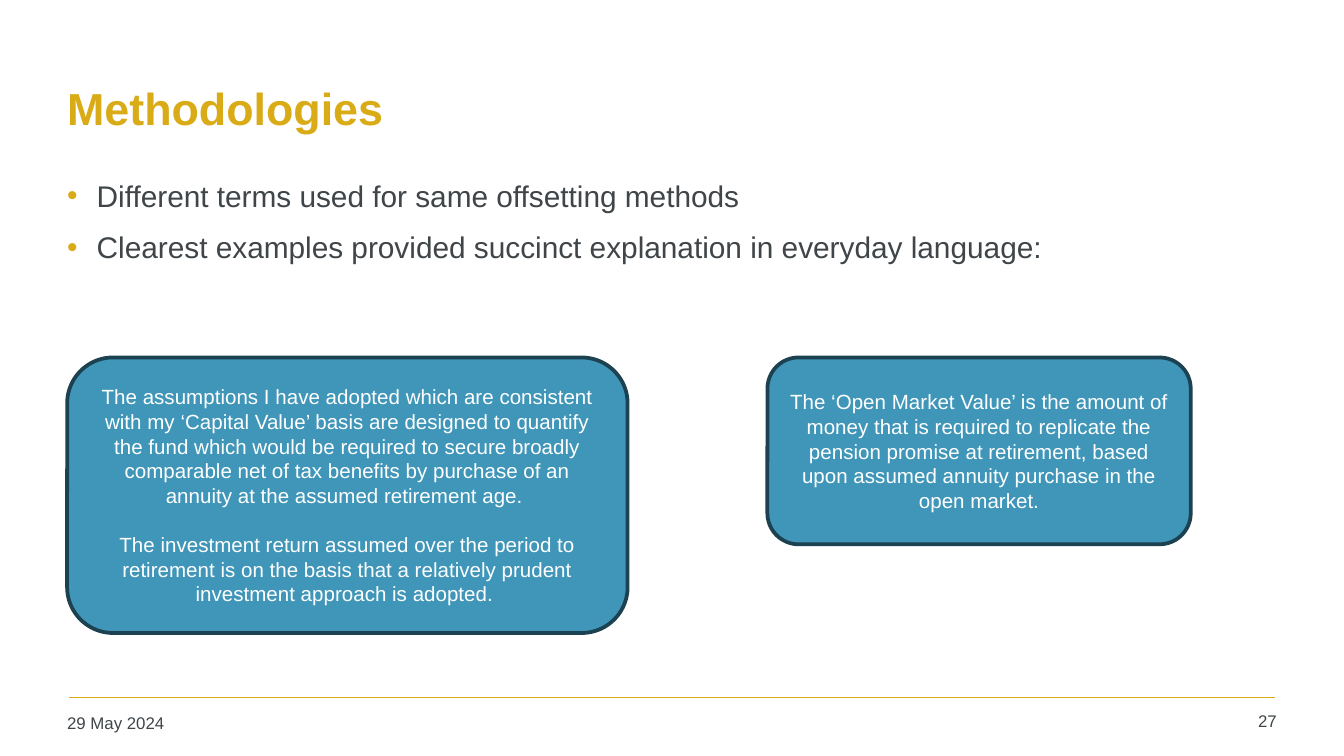
from lxml.etree import SubElement
from pptx import Presentation
from pptx.dml.color import RGBColor
from pptx.enum.shapes import MSO_CONNECTOR, MSO_SHAPE
from pptx.enum.text import MSO_ANCHOR, PP_ALIGN
from pptx.oxml.ns import qn
from pptx.util import Inches, Pt

GOLD = RGBColor(0xD9, 0xAB, 0x16)
GREY = RGBColor(0x3F, 0x45, 0x48)
BLUE = RGBColor(0x40, 0x96, 0xB8)
NAVY = RGBColor(0x1C, 0x42, 0x51)
WHITE = RGBColor(0xFF, 0xFF, 0xFF)
FONT = "Arial"

# Content
TITLE = "Methodologies"
BULLETS = [
    "Different terms used for same offsetting methods",
    "Clearest examples provided succinct explanation in everyday language:",
]
DATE = "29 May 2024"
PAGE_NUMBER = "27"
QUOTE_TOP = 2.66
QUOTES = [  # left, width, height, paragraphs
    (5.71, 3.15, 1.39, [
        "The ‘Open Market Value’ is the amount of money that is required to "
        "replicate the pension promise at retirement, based upon assumed "
        "annuity purchase in the open market.",
    ]),
    (0.5, 4.17, 2.05, [
        "The assumptions I have adopted which are consistent with my ‘Capital "
        "Value’ basis are designed to quantify the fund which would be required "
        "to secure broadly comparable net of tax benefits by purchase of an "
        "annuity at the assumed retirement age. ",
        "The investment return assumed over the period to retirement is on the "
        "basis that a relatively prudent investment approach is adopted. ",
    ]),
]


def write(text_frame, texts, size, color, bold=False, align=PP_ALIGN.LEFT,
          gap=0, bullet=None):
    text_frame.word_wrap = True
    text_frame.text = "\n".join(texts)
    for index, paragraph in enumerate(text_frame.paragraphs):
        if bullet:
            add_bullet(paragraph, bullet)
        paragraph.alignment = align
        paragraph.space_before = Pt(gap if index else 0)
        for run in paragraph.runs:
            run.font.name = FONT
            run.font.size = Pt(size)
            run.font.bold = bold
            run.font.color.rgb = color


def add_bullet(paragraph, color):
    properties = paragraph._p.get_or_add_pPr()
    properties.set("marL", str(Inches(0.22)))
    properties.set("indent", str(Inches(-0.22)))
    bullet_color = SubElement(properties, qn("a:buClr"))
    SubElement(bullet_color, qn("a:srgbClr"), val=str(color))
    SubElement(properties, qn("a:buFont"), typeface=FONT)
    SubElement(properties, qn("a:buChar"), char="•")


def add_text(slide, left, top, width, height, texts, size, color,
             anchor=MSO_ANCHOR.TOP, **style):
    box = slide.shapes.add_textbox(
        Inches(left), Inches(top), Inches(width), Inches(height))
    text_frame = box.text_frame
    text_frame.margin_left = text_frame.margin_right = Inches(0.07)
    text_frame.margin_top = text_frame.margin_bottom = Inches(0.04)
    text_frame.vertical_anchor = anchor
    write(text_frame, texts, size, color, **style)


def add_quote(slide, left, width, height, texts):
    shape = slide.shapes.add_shape(
        MSO_SHAPE.ROUNDED_RECTANGLE,
        Inches(left), Inches(QUOTE_TOP), Inches(width), Inches(height))
    shape.shadow.inherit = False
    shape.fill.solid()
    shape.fill.fore_color.rgb = BLUE
    shape.line.color.rgb = NAVY
    shape.line.width = Pt(2)
    shape.text_frame.vertical_anchor = MSO_ANCHOR.MIDDLE
    write(shape.text_frame, texts, 11, WHITE, align=PP_ALIGN.CENTER, gap=13)


def main():
    # Widescreen 16:9
    presentation = Presentation()
    presentation.slide_width = Inches(10)
    presentation.slide_height = Inches(10) * 9 // 16
    slide = presentation.slides.add_slide(presentation.slide_layouts[6])

    # Footer rule
    rule = slide.shapes.add_connector(
        MSO_CONNECTOR.STRAIGHT,
        Inches(0.51), Inches(5.19), Inches(9.49), Inches(5.19))
    rule.line.color.rgb = GOLD
    rule.line.width = Pt(1)
    SubElement(rule._element.spPr, qn("a:effectLst"))

    # Title and bullets
    add_text(slide, 0.43, 0.33, 9.07, 0.94, [TITLE], 24, GOLD,
             anchor=MSO_ANCHOR.MIDDLE, bold=True)
    add_text(slide, 0.43, 1.28, 9.07, 3.81, BULLETS, 16, GREY,
             gap=8.5, bullet=GOLD)

    # Footer
    add_text(slide, 0.43, 5.26, 2.2, 0.27, [DATE], 9, GREY)
    add_text(slide, 8.86, 5.25, 0.71, 0.28, [PAGE_NUMBER], 9, GREY,
             align=PP_ALIGN.RIGHT)

    # Quoted explanations
    for quote in QUOTES:
        add_quote(slide, *quote)

    presentation.save("out.pptx")


if __name__ == "__main__":
    main()
